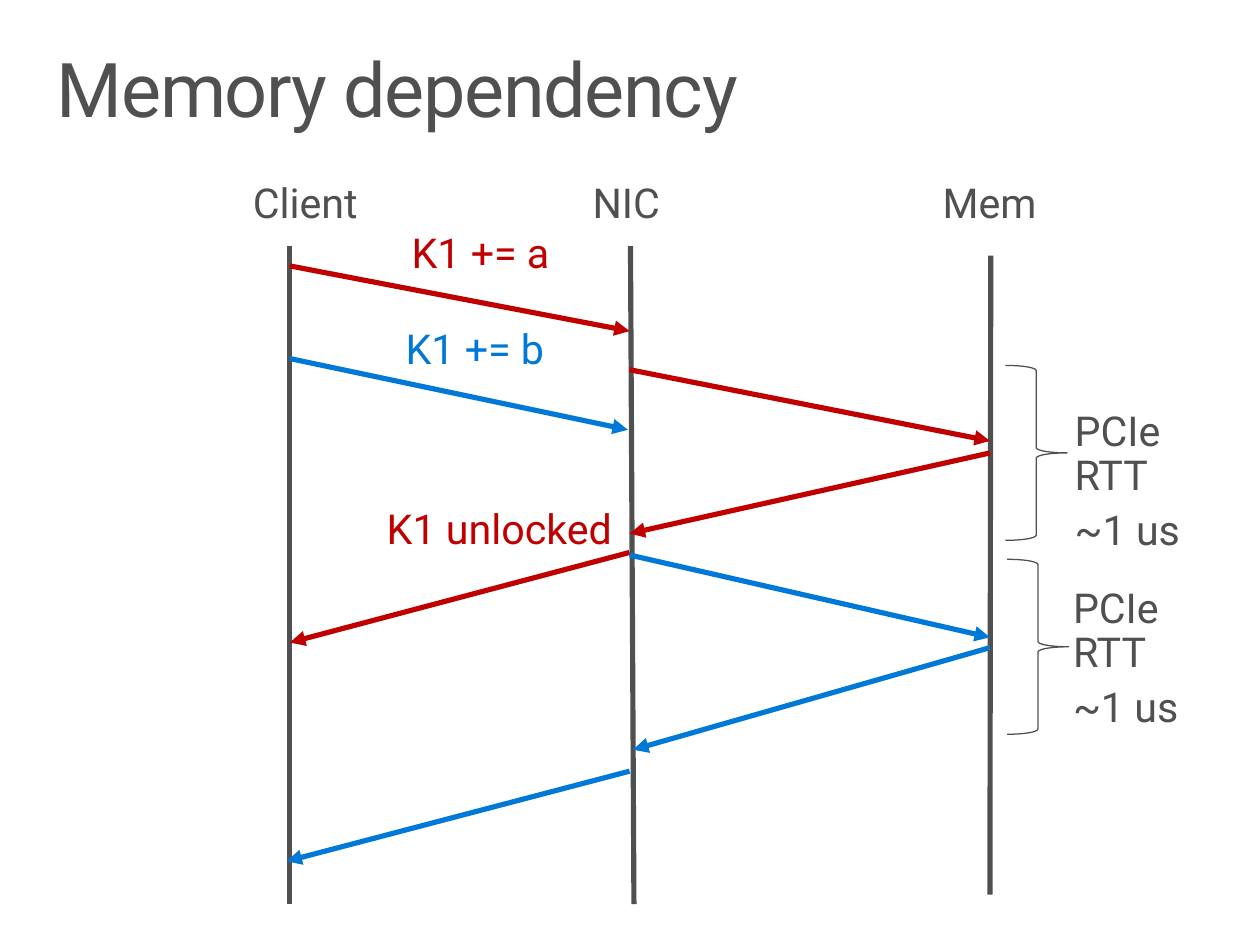
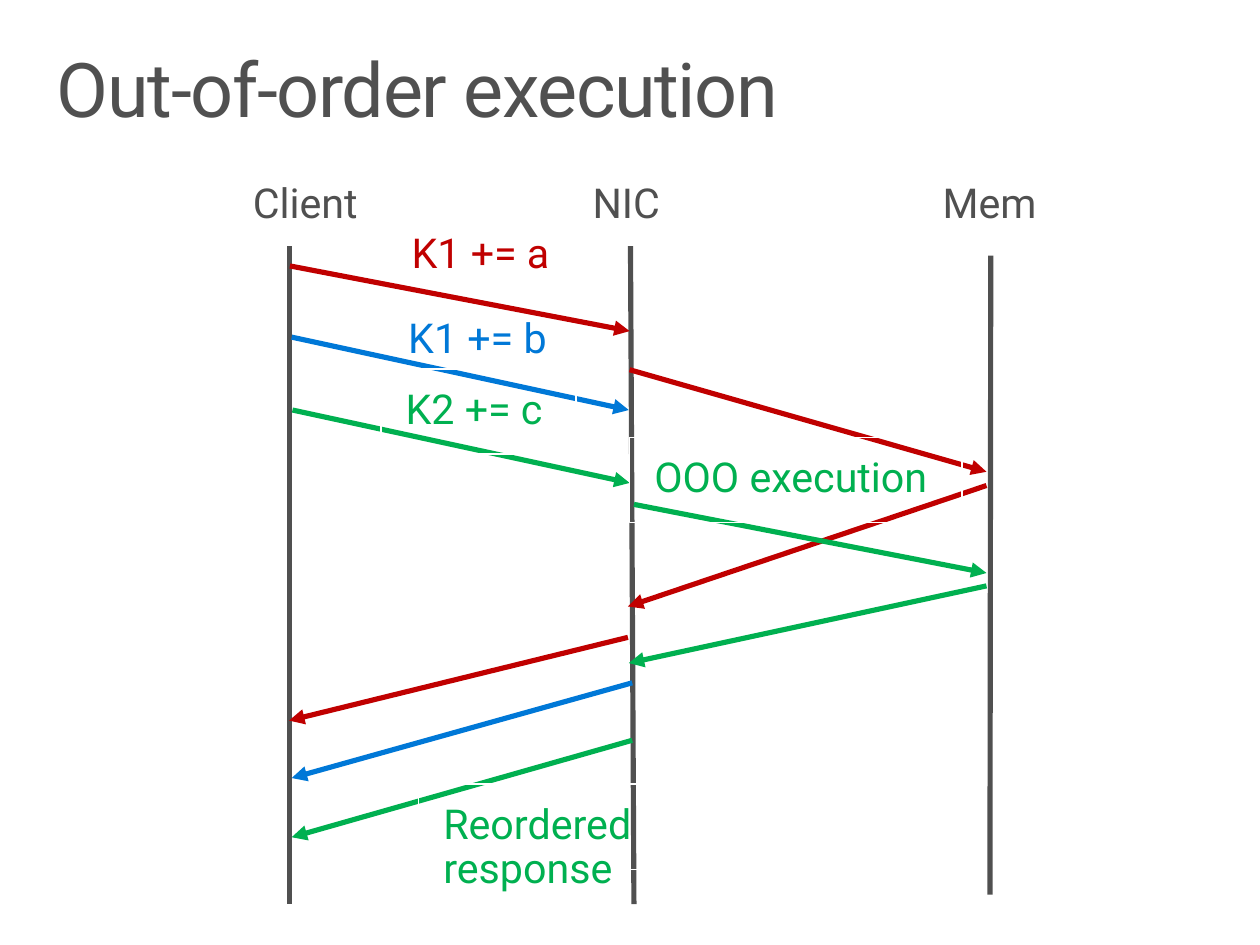
from dataclasses import dataclass

from lxml import etree
from pptx import Presentation
from pptx.dml.color import RGBColor
from pptx.enum import shapes, text
from pptx.oxml import ns
from pptx.util import Pt


@dataclass(frozen=True)
class Theme:
    font: str = "Roboto"
    ink: str = "505050"
    red: str = "C00000"
    blue: str = "0078D7"
    green: str = "00B050"
    white: str = "FFFFFF"
    title: int = 44
    body: int = 24
    thick: float = 3
    thin: float = 0.75


T = Theme()

# Lifelines: name, label left, label width, line from (x, y) to (x, y)
LANES = [
    ("NIC", 331, 68.4, (367.5, 143.5), (369.5, 527)),
    ("Mem", 535, 84.2, (577.5, 149), (577, 521.5)),
    ("Client", 133, 90.7, (169, 143.5), (169, 527)),
]
LABEL_TOP, LABEL_H = 95, 49.7


def style(par, size, color):
    font = par.font
    font.name, font.size = T.font, Pt(size)
    font.color.rgb = RGBColor.from_string(color)
    par.line_spacing = 0.9


def inset(frame, side, edge):
    frame.margin_left = frame.margin_right = Pt(side)
    frame.margin_top = frame.margin_bottom = Pt(edge)
    frame.vertical_anchor = text.MSO_ANCHOR.TOP


def stroke(line, color, width):
    line.color.rgb = RGBColor.from_string(color)
    line.width = Pt(width)


def head(slide, words):
    """Fill and place the title."""
    box = slide.shapes.title
    box.left, box.top, box.width, box.height = map(Pt, (21.6, 23, 691, 72))
    frame = box.text_frame
    frame.text = words
    frame.auto_size = text.MSO_AUTO_SIZE.NONE
    inset(frame, 11.5, 7.2)
    par = frame.paragraphs[0]
    style(par, T.title, T.ink)
    par.alignment = text.PP_ALIGN.LEFT
    par.runs[0].font._element.set("spc", "-80")


def label(slide, words, color, x, y, w, h=LABEL_H, edged=False):
    """Text that grows with its words; text of several lines keeps its box."""
    box = slide.shapes.add_textbox(Pt(x), Pt(y), Pt(w), Pt(h))
    if edged:
        stroke(box.line, T.white, T.thin)
    frame = box.text_frame
    frame.text = words
    inset(frame, 14.4, 11.5)
    fixed = "\v" in words
    frame.word_wrap = fixed
    size = text.MSO_AUTO_SIZE
    frame.auto_size = size.NONE if fixed else size.SHAPE_TO_FIT_TEXT
    for par in frame.paragraphs:
        style(par, T.body, color)
        par.space_after = Pt(6)


def line(slide, color, start, end, arrow=False):
    link = slide.shapes.add_connector(
        shapes.MSO_CONNECTOR.STRAIGHT, *map(Pt, (*start, *end)))
    stroke(link.line, color, T.thick)
    if arrow:
        tail = etree.SubElement(link.line._get_or_add_ln(), ns.qn("a:tailEnd"))
        tail.set("type", "triangle")
    etree.SubElement(link._element.spPr, ns.qn("a:effectLst"))


def brace(slide, x, y):
    mark = slide.shapes.add_shape(
        shapes.MSO_SHAPE.RIGHT_BRACE, Pt(x), Pt(y), Pt(36), Pt(102))
    mark.shadow.inherit = False
    mark.fill.background()
    stroke(mark.line, T.ink, T.thin)


def chart(deck, title, back, arrows, front):
    """One sequence diagram: lifelines, labels, arrows, labels on top."""
    slide = deck.slides.add_slide(deck.slide_layouts[5])
    head(slide, title)
    for name, x, w, start, end in LANES:
        line(slide, T.ink, start, end)
        label(slide, name, T.ink, x, LABEL_TOP, w)
    label(slide, "K1 += a", T.red, 225.5, 124.5, 115)
    for item in back:
        label(slide, *item, edged=True)
    line(slide, T.red, (169, 155), (367, 193), True)
    for item in arrows:
        line(slide, *item, True)
    for item in front:
        label(slide, *item, edged=True)
    return slide


def main():
    deck = Presentation()
    deck.slide_width, deck.slide_height = Pt(734.4), Pt(550.8)

    # Second request waits for the first
    slide = chart(
        deck, "Memory dependency",
        [("K1 += b", T.blue, 222, 180, 116.6)],
        [
            (T.red, (367, 215.5), (577, 257)),
            (T.red, (577, 264), (367, 311)),
            (T.red, (367, 322), (169, 374.5)),
            (T.blue, (169, 209), (366, 250.5)),
            (T.blue, (367, 323.5), (577, 371.5)),
            (T.blue, (577, 377.5), (369, 437)),
            (T.blue, (367, 449.5), (167, 502)),
        ],
        [])
    label(slide, "K1 unlocked", T.red, 211, 285, 160.6)
    for x, y, left, top in ((586, 213, 612, 228), (587, 326, 611, 331)):
        brace(slide, x, y)
        label(slide, "PCIe\vRTT\n~1 us", T.ink, left, top, 123, 81.4)

    # Independent request overtakes
    chart(
        deck, "Out-of-order execution",
        [("K1 += b", T.blue, 223.5, 174, 116.6)],
        [
            (T.red, (367, 215.5), (575, 275)),
            (T.red, (575, 283), (366, 353.5)),
            (T.red, (366, 371.5), (168.5, 420)),
            (T.blue, (170, 196.5), (366.5, 239)),
            (T.blue, (368.5, 398), (170, 453.5)),
            (T.green, (170.5, 239), (367, 281.5)),
            (T.green, (369.5, 294), (575, 334)),
            (T.green, (575, 341.5), (366.5, 386.5)),
            (T.green, (368.5, 431.5), (170, 488)),
        ],
        [
            ("K2 += c", T.green, 222, 215, 113.8),
            ("OOO execution", T.green, 367, 255, 193.7),
            ("Reordered\vresponse", T.green, 244, 457, 242.6),
        ])

    deck.save("out.pptx")


if __name__ == "__main__":
    main()
